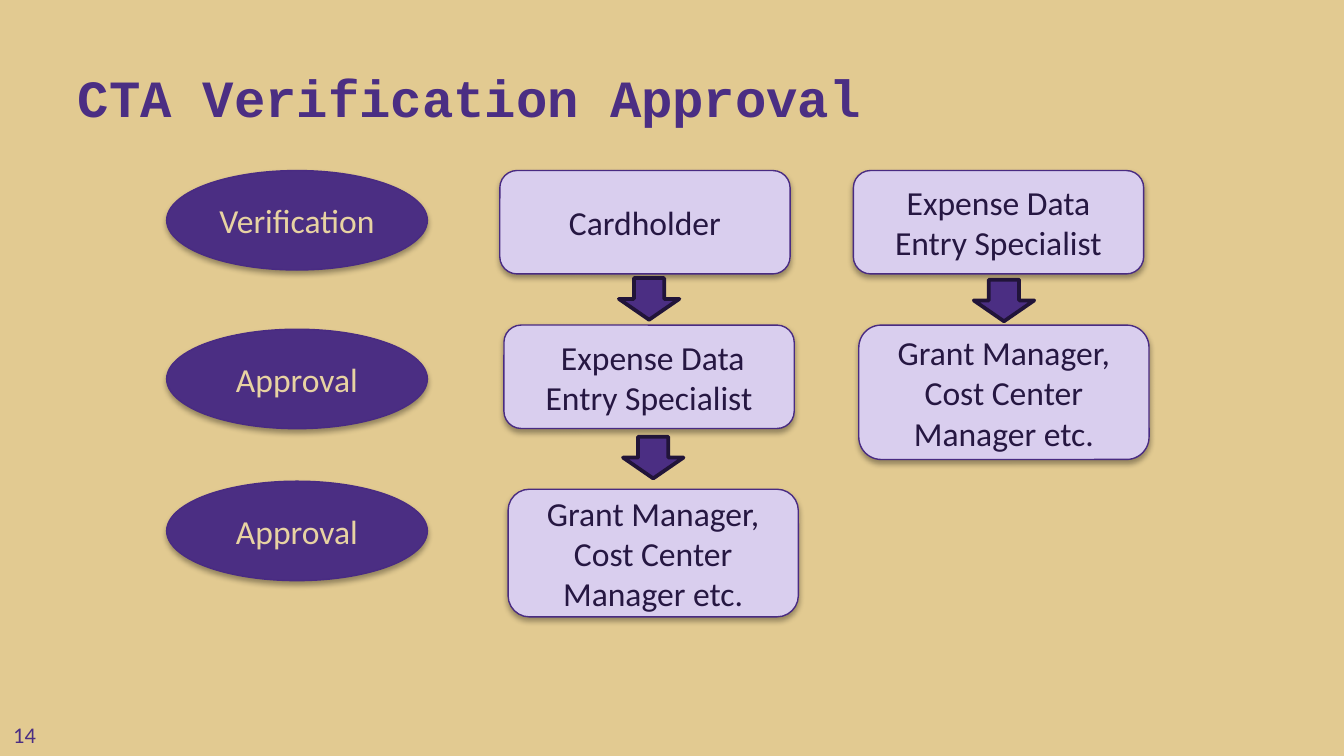
import pptx
import pptx.dml.color
import pptx.enum.shapes
import pptx.enum.text
import pptx.oxml
import pptx.oxml.ns
import pptx.util

Pt = pptx.util.Pt
SHAPE = pptx.enum.shapes.MSO_SHAPE
ALIGN = pptx.enum.text.PP_ALIGN
ANCHOR = pptx.enum.text.MSO_ANCHOR

COLORS = {
    "sand": "E2CA91",
    "purple": "4B2E83",
    "outline": "492B82",
    "lilac": "D9CEEE",
    "cream": "E8D3A2",
    "ink": "261742",
    "arrow_line": "211439",
}
STEP_WIDTH, STEP_HEIGHT = 155.5, 55.4
STAGE_LEFT, STAGE_WIDTH, STAGE_HEIGHT = 89.3, 139.7, 53.3
ARROW_WIDTH, ARROW_HEIGHT = 32.4, 22.3

STAGES = [("Verification", 91.4), ("Approval", 176.4), ("Approval", 257.8)]
# Each step: text, left, top, height, top of the arrow leading into it
FLOWS = [
    [
        ("Cardholder", 267.8, 91.4, STEP_HEIGHT, None),
        (" Expense Data Entry Specialist", 270, 174.2, STEP_HEIGHT, 149),
        ("Grant Manager, Cost Center Manager etc.", 272.2, 262.1, 68.4, 234),
    ],
    [
        ("Expense Data Entry Specialist", 457.2, 91.4, STEP_HEIGHT, None),
        ("Grant Manager, Cost Center Manager etc.", 460.1, 174.2, 72, 149.8),
    ],
]


def rgb(name):
    return pptx.dml.color.RGBColor.from_string(COLORS[name])


def write(box, text, color, anchor, align, **font_format):
    frame = box.text_frame
    frame.word_wrap = True
    frame.vertical_anchor = anchor
    para = frame.paragraphs[0]
    para.alignment = align
    span = para.add_run()
    span.text = text
    for name, value in font_format.items():
        setattr(span.font, name, value)
    span.font.color.rgb = rgb(color)


def add_filled(slide, kind, place, fill, line, line_width):
    shape = slide.shapes.add_shape(kind, *map(Pt, place))
    shape.shadow.inherit = False
    shape.fill.solid()
    shape.fill.fore_color.rgb = rgb(fill)
    shape.line.color.rgb = rgb(line)
    shape.line.width = Pt(line_width)
    return shape


def add_shadow(shape):
    """Cast a soft shadow straight down."""
    effects = shape.element.spPr.find(pptx.oxml.ns.qn("a:effectLst"))
    effects.append(pptx.oxml.parse_xml(
        f'<a:outerShdw {pptx.oxml.ns.nsdecls("a")} blurRad="{Pt(3.1)}" '
        f'dist="{Pt(1.8)}" dir="5400000" rotWithShape="0">'
        '<a:srgbClr val="000000"><a:alpha val="35000"/></a:srgbClr>'
        '</a:outerShdw>'))


def add_node(slide, kind, place, text, fill, color):
    node = add_filled(slide, kind, place, fill, "outline", 0.75)
    add_shadow(node)
    write(node, text, color, ANCHOR.MIDDLE, ALIGN.CENTER,
          name="Calibri", size=Pt(18))


def add_arrow(slide, center, top):
    place = (center - ARROW_WIDTH / 2, top, ARROW_WIDTH, ARROW_HEIGHT)
    add_filled(slide, SHAPE.DOWN_ARROW, place, "purple", "arrow_line", 2)


def add_label(slide, place, text, anchor, **font_format):
    box = slide.shapes.add_textbox(*map(Pt, place))
    write(box, text, "purple", anchor, ALIGN.LEFT, **font_format)


def main():
    deck = pptx.Presentation()
    deck.slide_width, deck.slide_height = Pt(720), Pt(405)
    slide = deck.slides.add_slide(deck.slide_layouts[6])
    slide.background.fill.solid()
    slide.background.fill.fore_color.rgb = rgb("sand")

    add_label(slide, (34.6, 33.1, 645, 38.9), "CTA Verification Approval",
              ANCHOR.BOTTOM, name="Courier New", size=Pt(28), bold=True)
    for text, top in STAGES:
        place = (STAGE_LEFT, top, STAGE_WIDTH, STAGE_HEIGHT)
        add_node(slide, SHAPE.OVAL, place, text, "purple", "cream")
    for flow in FLOWS:
        for text, left, top, height, arrow_top in flow:
            place = (left, top, STEP_WIDTH, height)
            add_node(slide, SHAPE.ROUNDED_RECTANGLE, place, text,
                     "lilac", "ink")
            if arrow_top is not None:
                add_arrow(slide, left + STEP_WIDTH / 2, arrow_top)
    add_label(slide, (0, 383, 45.4, 21.8), "14", ANCHOR.TOP,
              name="Calibri", size=Pt(12))

    deck.save("out.pptx")


if __name__ == "__main__":
    main()
